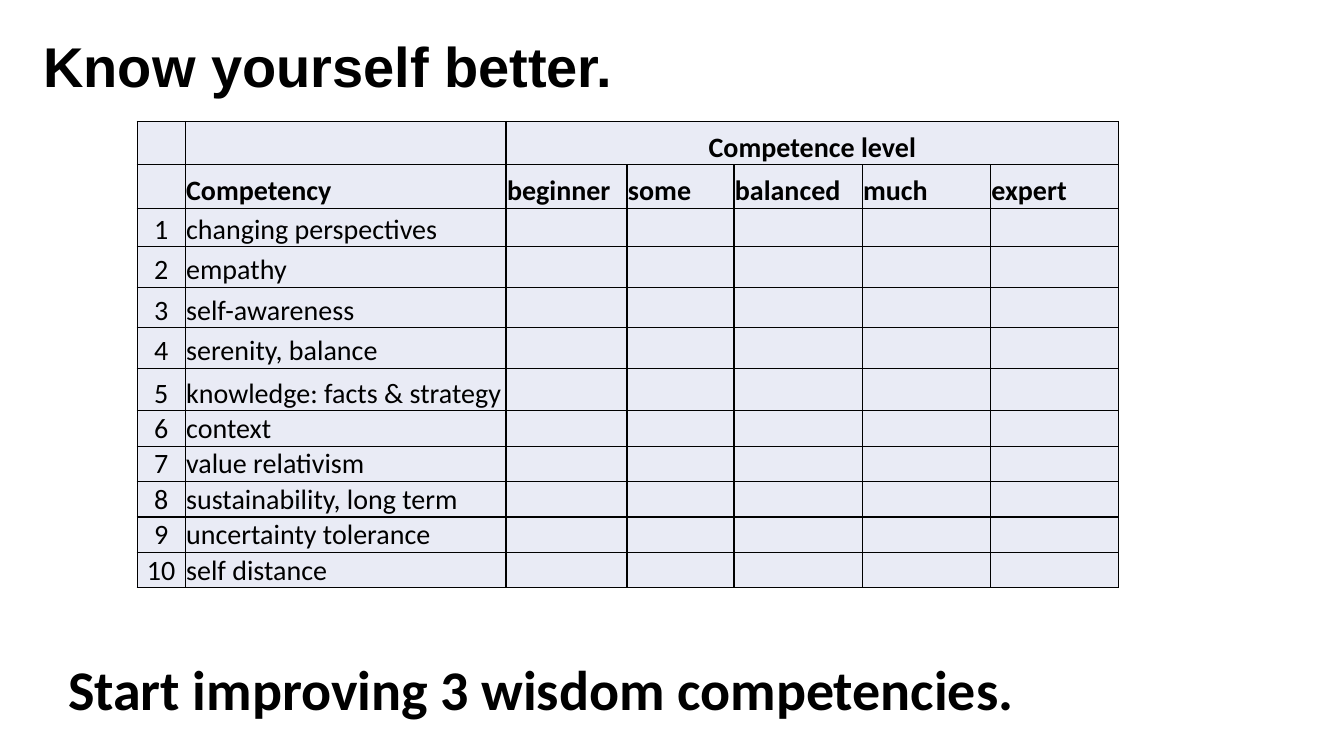
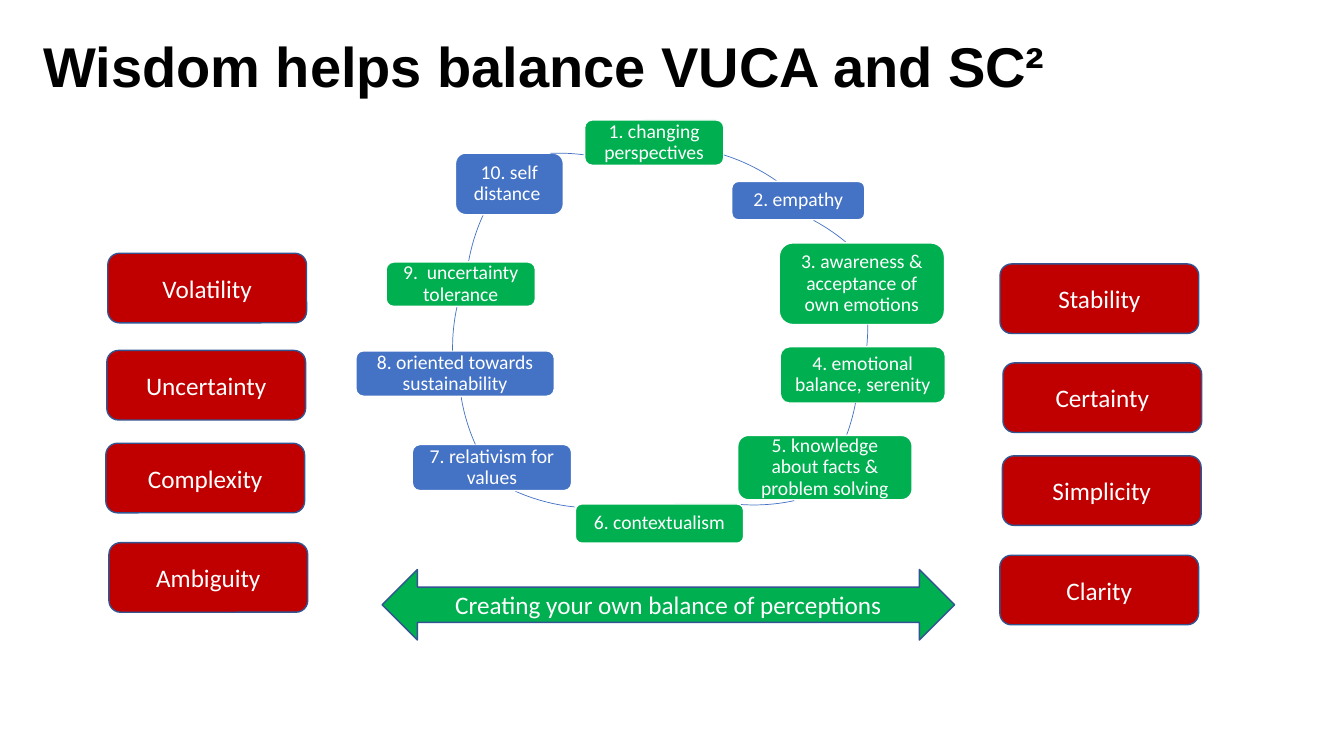
from dataclasses import dataclass

from lxml import etree
from pptx import Presentation
from pptx import util as u
from pptx.dml.color import RGBColor
from pptx.enum import shapes, text
from pptx.oxml import ns

Pt = u.Pt
KIND = shapes.MSO_SHAPE
MID, LOW, TOP = (text.MSO_ANCHOR.MIDDLE, text.MSO_ANCHOR.BOTTOM,
                 text.MSO_ANCHOR.TOP)
LEFT, MEAN = text.PP_ALIGN.LEFT, text.PP_ALIGN.CENTER


# Colours, fonts and type sizes
@dataclass(frozen=True)
class Theme:
    ink: str = "000000"
    white: str = "FFFFFF"
    pale: str = "E9EBF5"
    red: str = "C00000"
    green: str = "00B050"
    blue: str = "4472C4"
    edge: str = "325491"
    head: str = "Arial"
    body: str = "Calibri"
    big: float = 40
    grid: float = 20
    label: float = 18
    node: float = 14


T = Theme()

# Competence table
LEVELS = ["beginner", "some", "balanced", "much", "expert"]
SKILLS = ["changing perspectives", "empathy", "self-awareness",
          "serenity, balance", "knowledge: facts & strategy", "context",
          "value relativism", "sustainability, long term",
          "uncertainty tolerance", "self distance"]
WIDTHS = [34.3, 229.2, 86.4, 76.4, 91.6, 91.6, 91.6]
HEIGHTS = [31, 31, 27.4, 29, 29, 29, 30.3] + [25.3] * 5

# Ring: label, fill, box (left, top, width, height)
NODES = [
    ("1. changing perspectives", T.green, (417.6, 85.7, 99.4, 32.4)),
    ("2. empathy", T.blue, (522.7, 129.6, 95, 27.4)),
    ("3. awareness & acceptance of own emotions", T.green,
     (556.6, 173.5, 118, 58.3)),
    ("4. emotional balance, serenity", T.green, (557.3, 247.7, 118, 40.3)),
    ("5. knowledge about facts & problem solving", T.green,
     (527, 311, 124.6, 46)),
    ("6. contextualism", T.green, (411, 360, 120.2, 28)),
    ("7. relativism for values", T.blue, (294.5, 317.5, 113.8, 33)),
    ("8. oriented towards sustainability", T.blue,
     (254.2, 250.6, 141.8, 32.4)),
    ("9.  uncertainty tolerance", T.green, (275.8, 187.2, 106.6, 31.7)),
    ("10. self distance ", T.blue, (325.4, 109.4, 77, 44)),
]
# Arcs: left and top of the circle, start and end angle in degrees
RING = 275
ARCS = [
    (338.4, 104.4, 287.4, 304.9), (378.7, 141.1, 298.2, 310.1),
    (344.9, 95.8, 359.4, 6), (338.4, 125.3, 10.5, 20.5),
    (401, 85.7, 77.9, 94.5), (286.6, 87.8, 95.7, 114.1),
    (327.6, 123.8, 155.9, 170.6), (323.3, 110.9, 179.1, 192.4),
    (332.6, 73.4, 190.3, 204.7), (261.4, 109.4, 267.6, 277.5),
]

# Opposing forces: label, left, top
FORCES = [
    ("Volatility", 77, 180.9), ("Uncertainty", 76.3, 250.3),
    ("Complexity", 75.6, 316.6), ("Ambiguity", 77.8, 387.6),
    ("Stability", 714.3, 188.5), ("Certainty", 716.4, 259.2),
    ("Simplicity", 716, 325.6), ("Clarity", 714.2, 396.6),
]


def write(frame, words, size=T.label, color=T.white, font=T.body, bold=False,
          align=MEAN, anchor=MID, space=1.0, wrap=True, pad=(7.2, 3.6)):
    """Put one formatted paragraph in a text frame; pad is sides, top."""
    frame.auto_size = text.MSO_AUTO_SIZE.NONE
    frame.word_wrap = wrap
    frame.vertical_anchor = anchor
    frame.margin_left = frame.margin_right = Pt(pad[0])
    frame.margin_top = frame.margin_bottom = Pt(pad[1])
    para = frame.paragraphs[0]
    para.alignment = align
    para.line_spacing = space
    run = para.add_run()
    run.text = words
    run.font.name, run.font.size, run.font.bold = font, Pt(size), bold
    run.font.color.rgb = RGBColor.from_string(color)


def shape(slide, kind, box, fill=None, line=T.edge, width=1):
    item = slide.shapes.add_shape(kind, *map(Pt, box))
    item.shadow.inherit = False
    if fill:
        item.fill.solid()
        item.fill.fore_color.rgb = RGBColor.from_string(fill)
    else:
        item.fill.background()
    item.line.color.rgb = RGBColor.from_string(line)
    item.line.width = Pt(width)
    return item


def arc(slide, left, top, start, end):
    item = shape(slide, KIND.ARC, (left, top, RING, RING),
                 line=T.blue, width=0.5)
    # Angles count 60000 per degree, adjustments 100000 per unit
    for i, angle in enumerate((start, end)):
        item.adjustments[i] = angle * 0.6


def page(deck, words):
    """Add a slide with the shared title style."""
    slide = deck.slides.add_slide(deck.slide_layouts[5])
    title = slide.shapes.title
    title.left, title.top = Pt(23.8), Pt(13.7)
    title.width, title.height = Pt(889.2), Pt(74.9)
    write(title.text_frame, words, size=T.big, color=T.ink, font=T.head,
          bold=True, align=LEFT, anchor=TOP, pad=(7.2, 8.5))
    return slide


def frame_cell(cell):
    """Give a cell its fill, tight margins and black borders."""
    cell.margin_left = cell.margin_right = cell.margin_top = Pt(0.7)
    cell.margin_bottom = 0
    cell.vertical_anchor = LOW
    props = cell._tc.get_or_add_tcPr()
    for side in ("a:lnL", "a:lnR", "a:lnT", "a:lnB"):
        line = etree.SubElement(props, ns.qn(side), w=str(Pt(1)))
        fill = etree.SubElement(line, ns.qn("a:solidFill"))
        etree.SubElement(fill, ns.qn("a:srgbClr"), val=T.ink)
    cell.fill.solid()
    cell.fill.fore_color.rgb = RGBColor.from_string(T.pale)


def fill_cell(cell, words, bold=False, align=LEFT):
    para = cell.text_frame.paragraphs[0]
    para.alignment = align
    run = para.add_run()
    run.text = words
    run.font.name, run.font.size, run.font.bold = T.body, Pt(T.grid), bold
    run.font.color.rgb = RGBColor.from_string(T.ink)


def chart_skills(slide):
    """Build the table of skills by competence level."""
    box = map(Pt, (98, 86.8, sum(WIDTHS), sum(HEIGHTS)))
    table = slide.shapes.add_table(len(HEIGHTS), len(WIDTHS), *box).table
    for col, width in zip(table.columns, WIDTHS):
        col.width = Pt(width)
    for row, height in zip(table.rows, HEIGHTS):
        row.height = Pt(height)
    for cell in table.iter_cells():
        frame_cell(cell)
    table.cell(0, 2).merge(table.cell(0, len(WIDTHS) - 1))
    fill_cell(table.cell(0, 2), "Competence level", bold=True, align=MEAN)
    for i, name in enumerate(["Competency"] + LEVELS, 1):
        fill_cell(table.cell(1, i), name, bold=True)
    for i, skill in enumerate(SKILLS, 1):
        fill_cell(table.cell(i + 1, 0), str(i), align=MEAN)
        fill_cell(table.cell(i + 1, 1), skill)


def know(deck):
    slide = page(deck, "Know yourself better.")
    chart_skills(slide)
    call = slide.shapes.add_textbox(*map(Pt, (41.5, 463.7, 697, 55.7)))
    write(call.text_frame, "Start improving 3 wisdom competencies.",
          size=T.big, color=T.ink, bold=True, align=LEFT, anchor=TOP,
          wrap=False)


def balance(deck):
    slide = page(deck, "Wisdom helps balance VUCA and SC²")
    # Forces on both sides
    for words, left, top in FORCES:
        item = shape(slide, KIND.ROUNDED_RECTANGLE,
                     (left, top, 142, 49.7), T.red)
        write(item.text_frame, words)
    # Ring of wisdom skills
    for (words, fill, box), bend in zip(NODES, ARCS):
        item = shape(slide, KIND.ROUNDED_RECTANGLE, box, fill, T.white)
        write(item.text_frame, words, size=T.node, space=0.9, pad=(4.2, 4.2))
        arc(slide, *bend)
    # Arrow between the two sides
    item = shape(slide, KIND.LEFT_RIGHT_ARROW, (272.9, 406.8, 409, 50.4),
                 T.green)
    write(item.text_frame, "Creating your own balance of perceptions")


def main():
    deck = Presentation()
    deck.slide_width, deck.slide_height = Pt(960), Pt(540)
    know(deck)
    balance(deck)
    deck.save("out.pptx")


if __name__ == "__main__":
    main()
